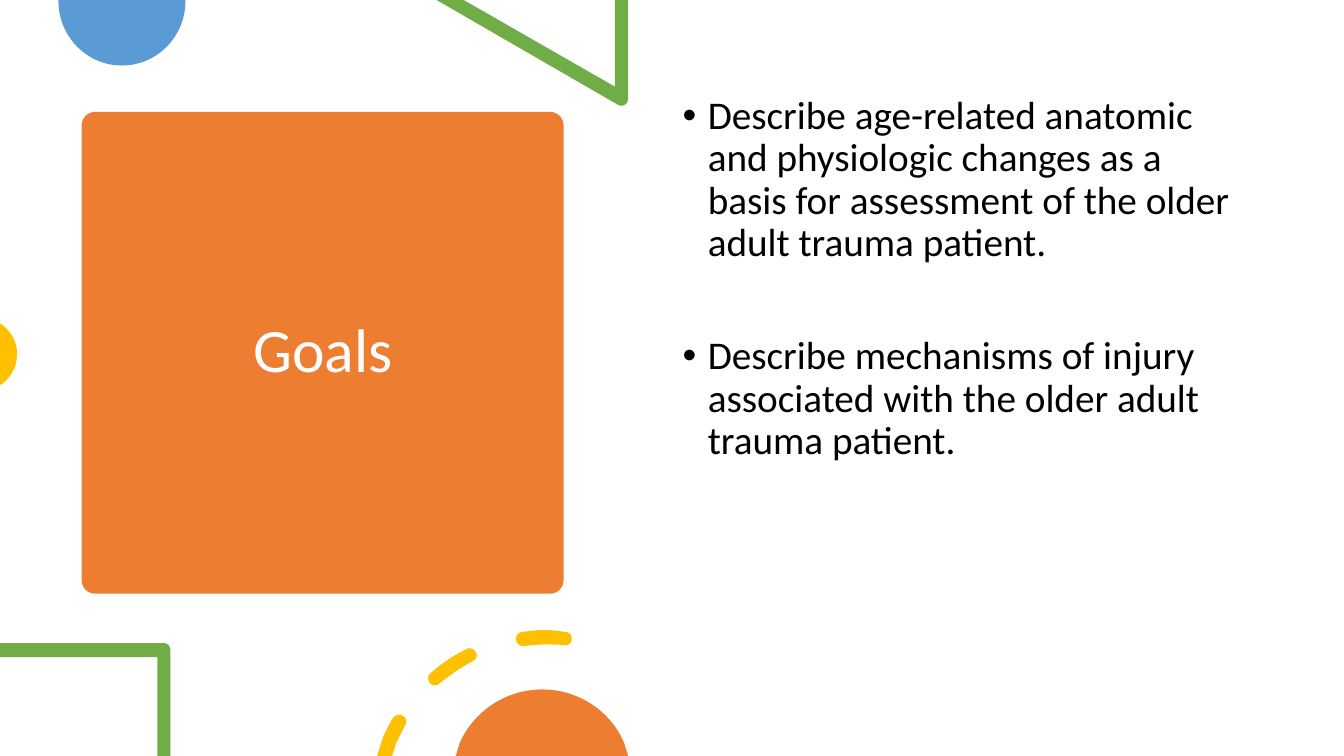
from dataclasses import dataclass

from lxml import etree
from pptx import Presentation
from pptx import util as u
from pptx.dml.color import RGBColor
from pptx.enum import shapes, text
from pptx.oxml.ns import qn

COLORS = {
    "orange": "ED7D31",
    "blue": "5B9BD5",
    "green": "70AD47",
    "yellow": "FFC000",
    "white": "FFFFFF",
    "black": "000000",
}

# A contour starts at its first point; a pair is a line, six numbers are a Bezier curve.
Contour = list[tuple[float, ...]]


@dataclass
class Decoration:
    color: str
    contours: list[Contour]


@dataclass
class Goal:
    wording: str
    space_before: float


BLUE_DISC = Decoration("blue", [[
    (1.84, 0), (0.58, 0), (0.58, 0.01),
    (0.58, 0.36, 0.86, 0.65, 1.21, 0.65), (1.56, 0.65, 1.84, 0.36, 1.84, 0.01),
]])
TRIANGLE = Decoration("green", [[
    (6.23, 0), (6.1, 0), (6.1, 0.86), (4.6, 0), (4.33, 0), (6.13, 1.04),
    (6.14, 1.05, 6.15, 1.05, 6.16, 1.05), (6.2, 1.05, 6.23, 1.02, 6.23, 0.98),
]])
YELLOW_DISC = Decoration("yellow", [[
    (0, 3.21), (0, 3.82), (0.02, 3.81),
    (0.11, 3.74, 0.17, 3.64, 0.17, 3.51), (0.17, 3.39, 0.11, 3.29, 0.02, 3.22),
]])
CORNER = Decoration("green", [[
    (1.63, 6.38), (0, 6.38), (0, 6.52), (1.56, 6.52), (1.56, 7.5), (1.69, 7.5),
    (1.69, 6.45), (1.69, 6.41, 1.66, 6.38, 1.63, 6.38),
]])
DASHED_ARC = Decoration("yellow", [
    [
        (3.97, 7.09), (3.94, 7.08, 3.92, 7.1, 3.9, 7.12),
        (3.86, 7.18, 3.83, 7.25, 3.8, 7.31), (3.74, 7.5), (3.89, 7.5), (3.93, 7.37),
        (3.96, 7.31, 3.99, 7.25, 4.02, 7.19), (4.04, 7.16, 4.03, 7.11, 3.99, 7.1),
        (3.99, 7.09, 3.98, 7.09, 3.97, 7.09),
    ],
    [
        (4.65, 6.43), (4.65, 6.43, 4.64, 6.43, 4.63, 6.44),
        (4.5, 6.5, 4.38, 6.58, 4.27, 6.68), (4.24, 6.7, 4.24, 6.75, 4.26, 6.77),
        (4.27, 6.79, 4.29, 6.8, 4.31, 6.8), (4.31, 6.8),
        (4.33, 6.8, 4.35, 6.79, 4.36, 6.78), (4.46, 6.7, 4.57, 6.62, 4.69, 6.56),
        (4.73, 6.54, 4.74, 6.5, 4.72, 6.47), (4.71, 6.44, 4.68, 6.43, 4.65, 6.43),
    ],
    [
        (5.4, 6.25), (5.32, 6.25, 5.25, 6.26, 5.18, 6.27),
        (5.14, 6.27, 5.11, 6.31, 5.12, 6.35), (5.12, 6.38, 5.15, 6.41, 5.19, 6.41),
        (5.19, 6.41, 5.19, 6.41, 5.2, 6.41), (5.33, 6.39, 5.46, 6.39, 5.6, 6.4),
        (5.63, 6.41, 5.67, 6.38, 5.67, 6.35), (5.68, 6.31, 5.65, 6.27, 5.62, 6.27),
        (5.62, 6.27, 5.61, 6.27, 5.61, 6.27), (5.54, 6.26, 5.47, 6.25, 5.4, 6.25),
    ],
])
ORANGE_DISC = Decoration("orange", [[
    (5.38, 6.84), (5.01, 6.84, 4.7, 7.06, 4.56, 7.37), (4.52, 7.5), (6.23, 7.5),
    (6.19, 7.37), (6.06, 7.06, 5.74, 6.84, 5.38, 6.84),
]])
BACK_DECORATIONS = [BLUE_DISC, TRIANGLE, YELLOW_DISC]
FRONT_DECORATIONS = [CORNER, DASHED_ARC, ORANGE_DISC]

GOALS = [
    Goal("Describe age-related anatomic and physiologic changes as a basis for "
         "assessment of the older adult trauma patient.", 10),
    Goal("Describe mechanisms of injury associated with the older adult trauma "
         "patient.", 50.5),
]


def rgb(name: str) -> RGBColor:
    return RGBColor.from_string(COLORS[name])


def apply_format(target, values: dict) -> None:
    for name, value in values.items():
        setattr(target, name, value)


def paint(shape, color: str) -> None:
    shape.shadow.inherit = False
    shape.fill.solid()
    shape.fill.fore_color.rgb = rgb(color)
    shape.line.fill.background()


def place(shape, left: float, top: float, width: float, height: float) -> None:
    apply_format(shape, {"left": u.Inches(left), "top": u.Inches(top),
                         "width": u.Inches(width), "height": u.Inches(height)})


def bend_segments(shape, contours: list[Contour]) -> None:
    """Replace the straight segments that stand for Bezier curves."""
    segments = [segment for contour in contours for segment in contour[1:]]
    for line, segment in zip(list(shape._element.iter(qn("a:lnTo"))), segments):
        if len(segment) == 2:
            continue
        curve = etree.Element(qn("a:cubicBezTo"))
        for x, y in zip(segment[::2], segment[1::2]):
            point = etree.SubElement(curve, qn("a:pt"))
            point.set("x", str(u.Inches(x) - shape.left))
            point.set("y", str(u.Inches(y) - shape.top))
        line.getparent().replace(line, curve)


def draw_decoration(page, decoration: Decoration) -> None:
    outlines = [[(u.Inches(segment[-2]), u.Inches(segment[-1])) for segment in contour]
                for contour in decoration.contours]
    builder = page.shapes.build_freeform(*outlines[0][0])
    for index, outline in enumerate(outlines):
        if index:
            builder.move_to(*outline[0])
        builder.add_line_segments(outline[1:], close=True)
    shape = builder.convert_to_shape()
    bend_segments(shape, decoration.contours)
    paint(shape, decoration.color)


def draw_card(page) -> None:
    """Draw the title's rounded card behind everything else."""
    card = page.shapes.add_shape(shapes.MSO_SHAPE.ROUNDED_RECTANGLE, 0, 0, 0, 0)
    place(card, 0.81, 1.11, 4.78, 4.78)
    card.adjustments[0] = 0.028
    paint(card, "orange")
    page.shapes._spTree.insert(2, card._element)


def write_paragraph(para, wording: str, size: float, color: str, values: dict) -> None:
    apply_format(para, {"line_spacing": 0.9, **values})
    span = para.add_run()
    span.text = wording
    apply_format(span.font, {"name": "Calibri", "size": u.Pt(size)})
    span.font.color.rgb = rgb(color)


def add_bullet(para) -> None:
    properties = para._p.get_or_add_pPr()
    properties.set("marL", str(u.Inches(0.25)))
    properties.set("indent", str(u.Inches(-0.25)))
    etree.SubElement(properties, qn("a:buFont")).set("typeface", "Arial")
    etree.SubElement(properties, qn("a:buChar")).set("char", "•")


def fill_title(box) -> None:
    place(box, 1.05, 1.22, 4.31, 4.56)
    apply_format(box.text_frame, {"word_wrap": True, "auto_size": text.MSO_AUTO_SIZE.NONE,
                                  "vertical_anchor": text.MSO_ANCHOR.MIDDLE})
    write_paragraph(box.text_frame.paragraphs[0], "Goals", 44, "white",
                    {"alignment": text.PP_ALIGN.CENTER})


def fill_goals(box) -> None:
    place(box, 6.67, 0.9, 5.75, 5.35)
    frame = box.text_frame
    apply_format(frame, {"word_wrap": True, "auto_size": text.MSO_AUTO_SIZE.NONE,
                         "vertical_anchor": text.MSO_ANCHOR.TOP})
    for index, goal in enumerate(GOALS):
        para = frame.add_paragraph() if index else frame.paragraphs[0]
        write_paragraph(para, goal.wording, 28, "black",
                        {"space_before": u.Pt(goal.space_before)})
        add_bullet(para)


def main() -> None:
    deck = Presentation()
    apply_format(deck, {"slide_width": u.Inches(13.33), "slide_height": u.Inches(7.5)})
    page = deck.slides.add_slide(deck.slide_layouts[1])
    draw_card(page)
    fill_title(page.shapes.title)
    for decoration in BACK_DECORATIONS:
        draw_decoration(page, decoration)
    goals_box = page.placeholders[1]
    fill_goals(goals_box)
    page.shapes._spTree.append(goals_box._element)
    for decoration in FRONT_DECORATIONS:
        draw_decoration(page, decoration)
    deck.save("out.pptx")


if __name__ == "__main__":
    main()
